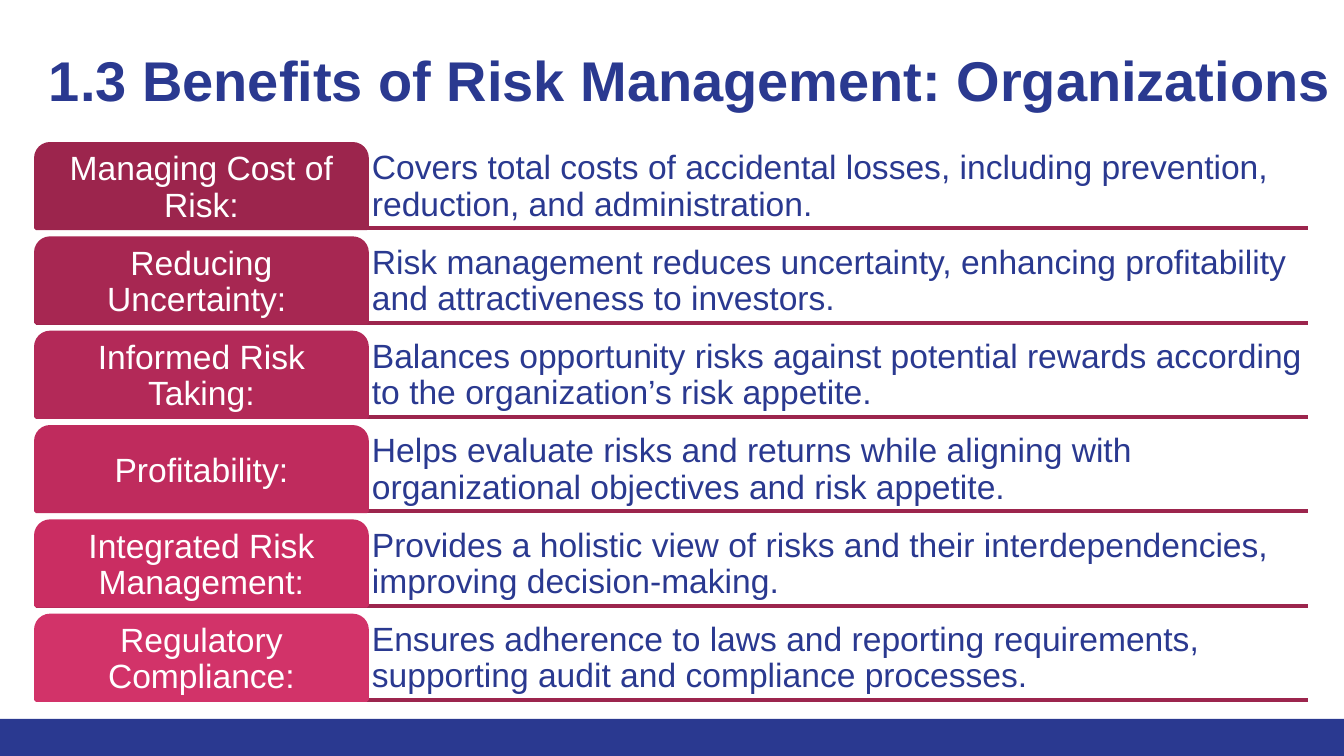
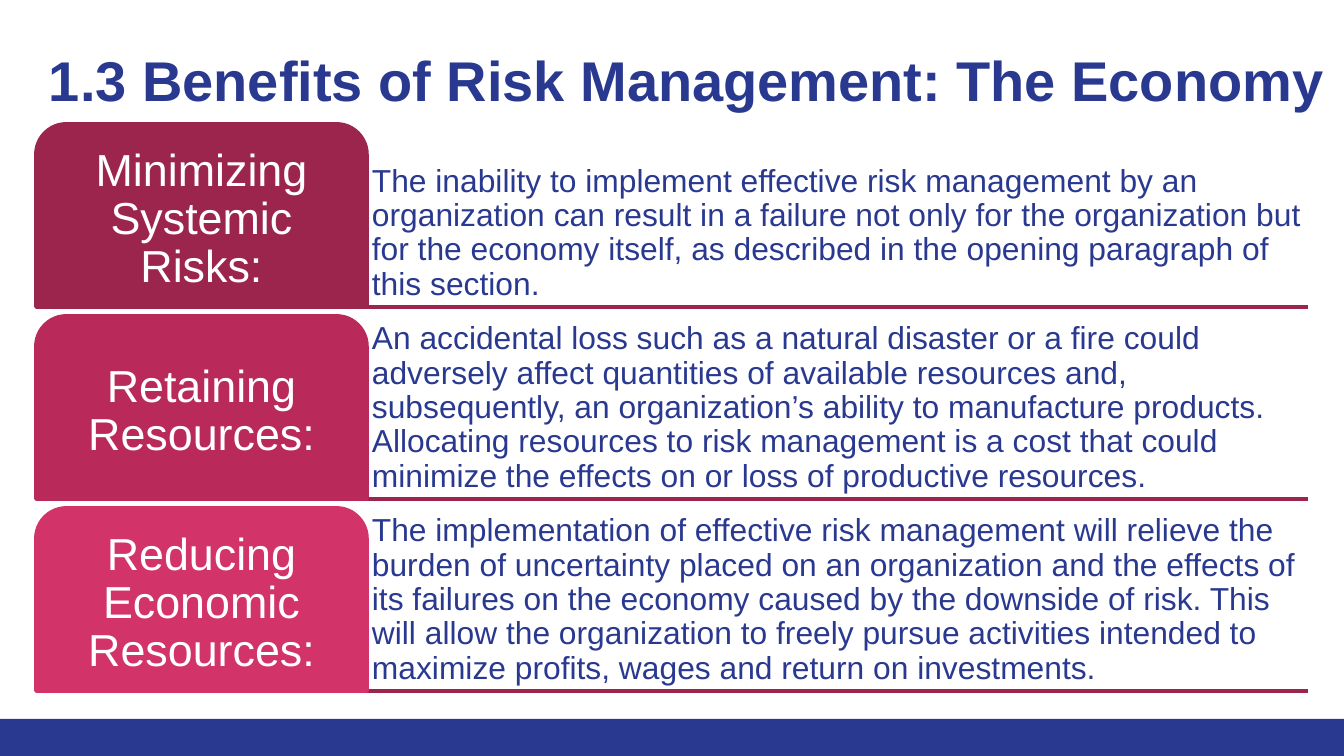
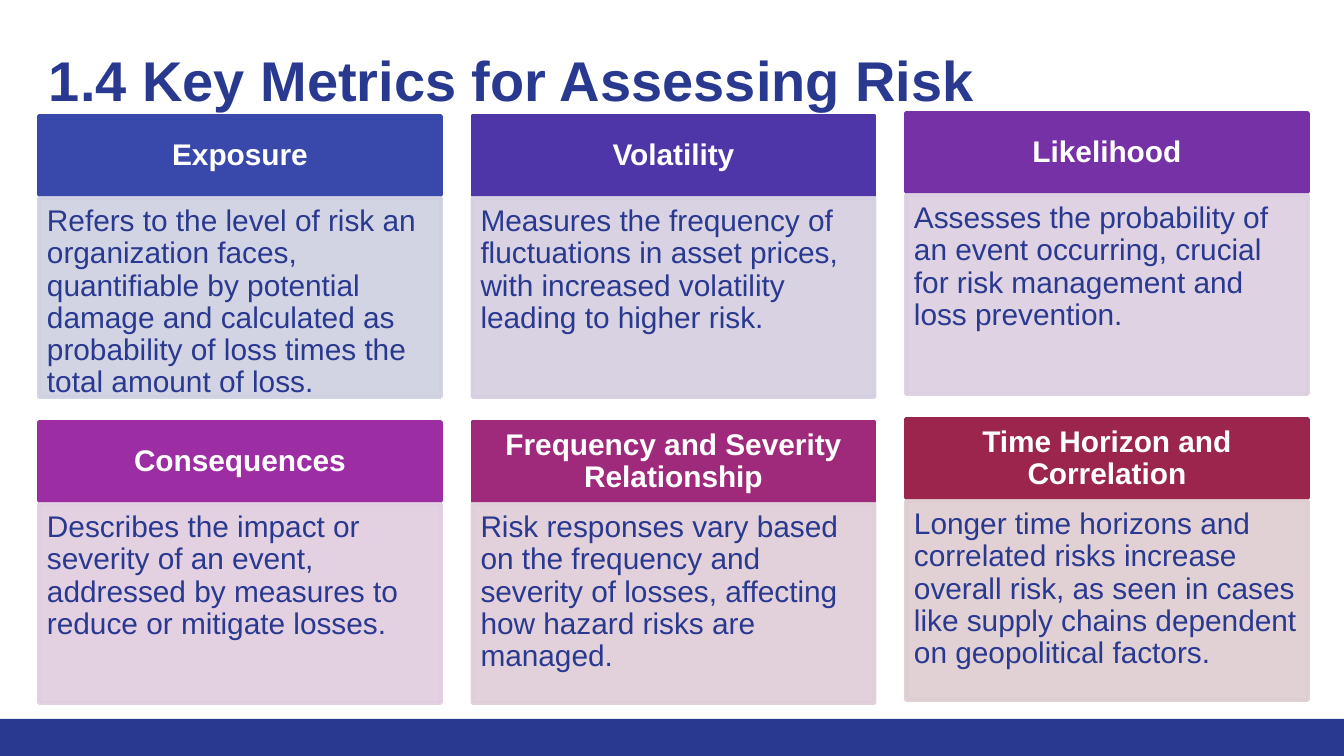
from lxml.etree import SubElement
from pptx import Presentation
from pptx.dml.color import RGBColor
from pptx.enum.shapes import MSO_CONNECTOR as Conn, MSO_SHAPE as Kind
from pptx.enum.text import MSO_ANCHOR as Anchor, MSO_AUTO_SIZE as Fit, PP_ALIGN as Align
from pptx.oxml.ns import qn
from pptx.util import Emu, Pt

# Shared look
Hex = RGBColor.from_string
NAVY = Hex("2A3990")
WINE = Hex("9C254D")
ROSE = Hex("D23369")
WHITE = Hex("FFFFFF")
FONT = "Arial"
WIDE, HIGH = 1344, 756
BAND = 719
LEFT, SPLIT, RIGHT = 36, 367, 1308

# Content: label, text, tab colour
FIRM = [
    ("Managing Cost of Risk:",
     "Covers total costs of accidental losses, including prevention, reduction, "
     "and administration.", WINE),
    ("Reducing Uncertainty: ",
     "Risk management reduces uncertainty, enhancing profitability and "
     "attractiveness to investors.", Hex("A72752")),
    ("Informed Risk Taking:",
     "Balances opportunity risks against potential rewards according to the "
     "organization’s risk appetite.", Hex("B32958")),
    ("Profitability:",
     "Helps evaluate risks and returns while aligning with organizational "
     "objectives and risk appetite.", Hex("BF2B5D")),
    ("Integrated Risk Management:",
     "Provides a holistic view of risks and their interdependencies, improving "
     "decision-making.", Hex("CA2D62")),
    ("Regulatory Compliance:",
     "Ensures adherence to laws and reporting requirements, supporting audit and "
     "compliance processes.", ROSE),
]
NATION = [
    ("Minimizing Systemic Risks:",
     "The inability to implement effective risk management by an organization can "
     "result in a failure not only for the organization but for the economy itself, "
     "as described in the opening paragraph of this section.", WINE),
    ("Retaining Resources:",
     "An accidental loss such as a natural disaster or a fire could adversely affect "
     "quantities of available resources and, subsequently, an organization’s ability "
     "to manufacture products. Allocating resources to risk management is a cost that "
     "could minimize the effects on or loss of productive resources.", Hex("B92A5A")),
    ("Reducing Economic Resources:",
     "The implementation of effective risk management will relieve the burden of "
     "uncertainty placed on an organization and the effects of its failures on the "
     "economy caused by the downside of risk. This will allow the organization to "
     "freely pursue activities intended to maximize profits, wages and return on "
     "investments.", ROSE),
]
# Content: heading, text, heading colour, pale colour
METRICS = [
    ("Exposure",
     "Refers to the level of risk an organization faces, quantifiable by potential "
     "damage and calculated as probability of loss times the total amount of loss.",
     Hex("3949AB"), Hex("CED0E2")),
    ("Volatility",
     "Measures the frequency of fluctuations in asset prices, with increased "
     "volatility leading to higher risk.", Hex("4E35A8"), Hex("D4CEE1")),
    ("Likelihood",
     "Assesses the probability of an event occurring, crucial for risk management "
     "and loss prevention.", Hex("7531A5"), Hex("DBCEE1")),
    ("Consequences",
     "Describes the impact or severity of an event, addressed by measures to reduce "
     "or mitigate losses.", Hex("9C2DA2"), Hex("E0CDDF")),
    ("Frequency and Severity Relationship",
     "Risk responses vary based on the frequency and severity of losses, affecting "
     "how hazard risks are managed.", Hex("9F297B"), Hex("DFCDD7")),
    ("Time Horizon and Correlation",
     "Longer time horizons and correlated risks increase overall risk, as seen in "
     "cases like supply chains dependent on geopolitical factors.",
     WINE, Hex("DECDD0")),
]


def px(n):
    return Emu(round(n * 914400 / 134.4))


def write(shape, text, size, color, pad, anchor, align=Align.LEFT, bold=False, lead=0.9):
    frame = shape.text_frame
    frame.text = text
    frame.word_wrap = True
    frame.auto_size = Fit.NONE
    frame.vertical_anchor = anchor
    (frame.margin_left, frame.margin_top,
     frame.margin_right, frame.margin_bottom) = map(px, pad)
    para = frame.paragraphs[0]
    para.alignment, para.line_spacing = align, lead
    font = para.font
    font.name, font.size, font.bold = FONT, Pt(size), bold
    font.color.rgb = color


def block(slide, kind, box, color):
    shape = slide.shapes.add_shape(kind, *map(px, box))
    shape.shadow.inherit = False
    shape.fill.solid()
    shape.fill.fore_color.rgb = color
    shape.line.color.rgb = color
    shape.line.width = Pt(2)
    return shape


def fade(shape, share):
    for tint in shape._element.spPr.iter(qn("a:srgbClr")):
        SubElement(tint, qn("a:alpha")).set("val", str(share * 1000))


def rule(slide, y):
    line = slide.shapes.add_connector(Conn.STRAIGHT, px(LEFT), px(y), px(RIGHT), px(y))
    line.line.color.rgb = WINE
    line.line.width = Pt(2)
    SubElement(line._element.spPr, qn("a:effectLst"))


def start(deck, text, width):
    slide = deck.slides.add_slide(deck.slide_layouts[5])
    title = slide.shapes.title
    title.left, title.top, title.width, title.height = map(px, (LEFT, 27, width, 120))
    write(title, text, 30, NAVY, (13, 19, 13, 13), Anchor.TOP, bold=True, lead=1.0)
    return slide


def band(slide):
    # The footer band moves to the layout, so every slide shows it
    bar = block(slide, Kind.RECTANGLE, (0, BAND, WIDE, HIGH - BAND), NAVY)
    bar.line.fill.background()
    slide.slide_layout.shapes._spTree.insert(2, bar._element)


def tabs(slide, rows, top, foot, gap, big, small, pad):
    high = (foot - top + gap) / len(rows) - gap
    for i in range(len(rows)):
        rule(slide, top + i * (high + gap) + high)
    for i, (label, text, color) in enumerate(rows):
        y = top + i * (high + gap)
        note = slide.shapes.add_textbox(*map(px, (SPLIT, y, RIGHT - SPLIT, high)))
        write(note, text, small, NAVY, [5] * 4, Anchor.BOTTOM)
        tab = block(slide, Kind.ROUND_2_SAME_RECTANGLE, (LEFT, y, SPLIT - LEFT, high), color)
        write(tab, label, big, WHITE, [pad] * 4, Anchor.MIDDLE, Align.CENTER)


def cards(slide, items):
    left, top, wide, cols = 39, 116, 402, 3
    step = (RIGHT - left - wide) / (cols - 1)
    for i, (head, text, color, pale) in enumerate(items):
        row, col = divmod(i, cols)
        x = left + col * step
        y = top + row * 306 - (3 if col == cols - 1 else 0)
        cap = block(slide, Kind.RECTANGLE, (x, y, wide, 79), color)
        write(cap, head, 16, WHITE, (11, 5, 11, 5), Anchor.MIDDLE, Align.CENTER, bold=True)
        body = block(slide, Kind.RECTANGLE, (x, y + 82, wide, 199), pale)
        fade(body, 90)
        write(body, text, 16, NAVY, (8, 8, 10, 12), Anchor.TOP)


def main():
    deck = Presentation()
    deck.slide_width, deck.slide_height = px(WIDE), px(HIGH)

    # Benefits for organizations
    slide = start(deck, "1.3 Benefits of Risk Management: Organizations", 1318)
    band(slide)
    tabs(slide, FIRM, 144, 700, 10, 18, 18, 5)

    # Benefits for the economy
    slide = start(deck, "1.3 Benefits of Risk Management: The Economy", 1308)
    tabs(slide, NATION, 124, 691, 9, 24, 17, 8)

    # Key metrics
    slide = start(deck, "1.4 Key Metrics for Assessing Risk", 1236)
    cards(slide, METRICS)

    deck.save("out.pptx")


if __name__ == "__main__":
    main()
